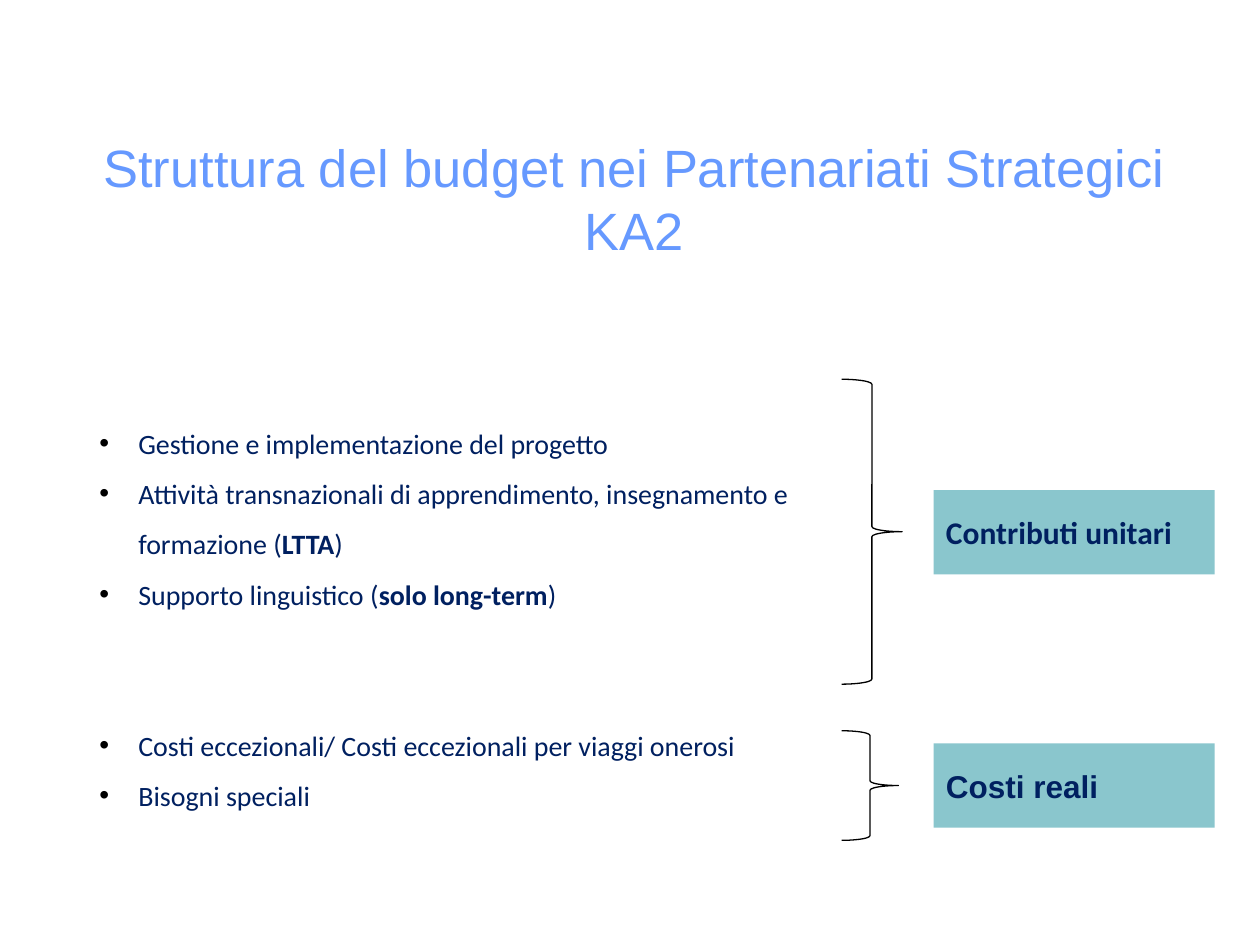
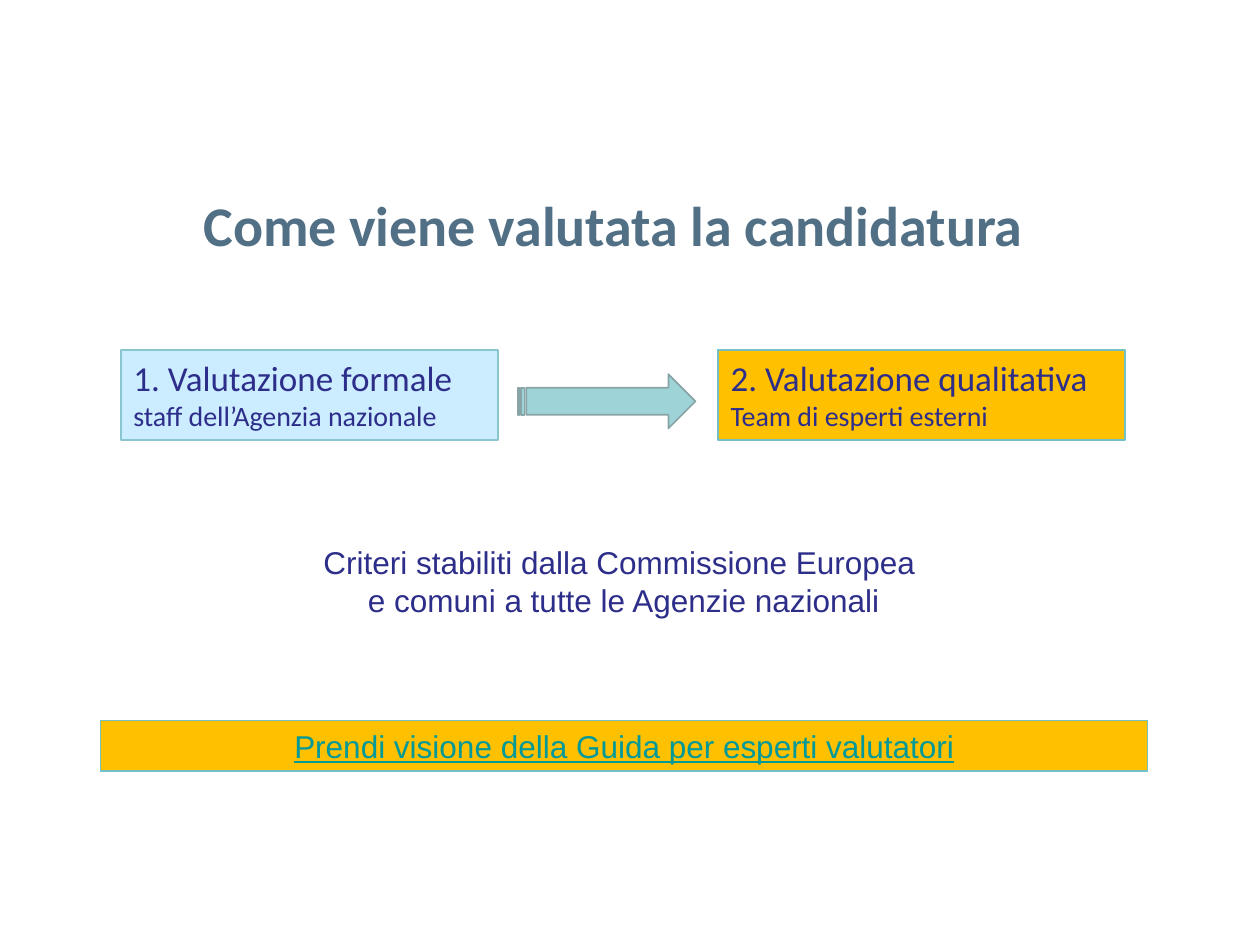
from lxml import etree
from pptx import Presentation
from pptx.dml.color import RGBColor
from pptx.enum.shapes import MSO_SHAPE
from pptx.enum.text import MSO_ANCHOR, MSO_AUTO_SIZE, PP_ALIGN
from pptx.oxml.ns import qn
from pptx.util import Inches, Pt

RECT = MSO_SHAPE.RECTANGLE
BRACE = MSO_SHAPE.RIGHT_BRACE
ARROW = MSO_SHAPE.STRIPED_RIGHT_ARROW
TOP, MIDDLE = MSO_ANCHOR.TOP, MSO_ANCHOR.MIDDLE
LEFT, CENTER = PP_ALIGN.LEFT, PP_ALIGN.CENTER
NO_FIT = MSO_AUTO_SIZE.NONE

COLORS = {
    "black": "000000", "navy": "002060", "indigo": "2D2D8A",
    "sky": "6699FF", "slate": "516F85", "teal": "8AC6CD",
    "aqua": "72BFC5", "mint": "9ED3D7", "gray": "89A4A7",
    "pale": "CCECFF", "gold": "FFC000", "link": "009999",
}


def color(name):
    return RGBColor.from_string(COLORS[name])


class Deck:
    """Holds the shared style and the current slide."""

    def __init__(self):
        self.prs = Presentation()
        self.prs.slide_width = Inches(10)
        self.prs.slide_height = Inches(7.5)
        self.slide = None

    def page(self, text, box, tone, **form):
        self.slide = self.prs.slides.add_slide(self.prs.slide_layouts[5])
        title = self.slide.shapes.title
        for name, value in zip(("left", "top", "width", "height"), box):
            setattr(title, name, Inches(value))
        self.label(title, [text], tone, anchor=MIDDLE, align=CENTER, **form)

    def label(self, shape, lines, tone, anchor=TOP, align=LEFT, sizes=None, **form):
        frame = shape.text_frame
        setup = {"word_wrap": True, "auto_size": NO_FIT, "vertical_anchor": anchor,
                 "margin_left": Inches(0.1), "margin_right": Inches(0.1),
                 "margin_top": Inches(0.05), "margin_bottom": Inches(0.05)}
        for name, value in setup.items():
            setattr(frame, name, value)
        for i, line in enumerate(lines):
            para = frame.add_paragraph() if i else frame.paragraphs[0]
            para.alignment = align
            if sizes:
                form["size"] = Pt(sizes[i])
            for j, part in enumerate(line.split("*")):
                run = para.add_run()
                run.text = part
                look = {**form, "bold": True} if j % 2 else form
                for name, value in look.items():
                    setattr(run.font, name, value)
                run.font.color.rgb = color(tone)
        return frame

    def shape(self, kind, box, fill=None, line=None, width=1):
        item = self.slide.shapes.add_shape(kind, *map(Inches, box))
        item.shadow.inherit = False
        if fill:
            item.fill.solid()
            item.fill.fore_color.rgb = color(fill)
        else:
            item.fill.background()
        if line:
            item.line.color.rgb = color(line)
            item.line.width = Pt(width)
        else:
            item.line.fill.background()
        return item

    def text(self, lines, box, tone, **form):
        item = self.slide.shapes.add_textbox(*map(Inches, box))
        return self.label(item, lines, tone, **form)

    def bullets(self, lines, box, tone, **form):
        frame = self.text(lines, box, tone, **form)
        for para in frame.paragraphs:
            props = para._p.get_or_add_pPr()
            props.set("marL", str(Inches(0.31)))
            props.set("indent", str(-Inches(0.31)))
            tint = etree.SubElement(props, qn("a:buClr"))
            etree.SubElement(tint, qn("a:srgbClr"), val=COLORS["black"])
            etree.SubElement(props, qn("a:buFont"), typeface="Arial")
            etree.SubElement(props, qn("a:buChar"), char="•")
            para.line_spacing = 1.5
        return frame


def budget(deck):
    deck.page("Struttura del budget nei Partenariati Strategici KA2",
              (0.59, 1.09, 8.89, 0.96), "sky", size=Pt(30), name="Arial")
    costs = deck.bullets(
        ["Gestione e implementazione del progetto",
         "Attività transnazionali di apprendimento, insegnamento e formazione (*LTTA*)",
         "Supporto linguistico (*solo long-term*)",
         "Costi eccezionali/ Costi eccezionali per viaggi onerosi",
         "Bisogni speciali"],
        (0.69, 3.2, 5.87, 3.33), "navy", size=Pt(16), name="Calibri")
    costs.paragraphs[3].space_before = Pt(57.5)
    groups = [("Contributi unitari", "Calibri", 3.89, (6.68, 3.01, 0.48, 2.42)),
              ("Costi reali", "Arial", 5.9, (6.68, 5.8, 0.45, 0.87))]
    for name, face, top, span in groups:
        deck.shape(BRACE, span, line="black", width=0.75)
        tag = deck.shape(RECT, (7.41, top, 2.23, 0.67), "teal")
        deck.label(tag, [name], "navy", anchor=MIDDLE,
                   size=Pt(18), name=face, bold=True)


def review(deck):
    deck.page("Come viene valutata la candidatura", (0.37, 1.15, 9, 1.25),
              "slate", size=Pt(32), name="Calibri", bold=True)
    steps = [("1. Valutazione formale", "staff dell’Agenzia nazionale",
              0.96, 2.99, "pale", "teal"),
             ("2. Valutazione qualitativa", "Team di esperti esterni",
              5.7, 3.23, "gold", "aqua")]
    for head, team, left, wide, fill, edge in steps:
        step = deck.shape(RECT, (left, 2.78, wide, 0.71), fill, edge)
        deck.label(step, [head, team], "indigo", sizes=(20, 16), name="Calibri")
    deck.shape(ARROW, (4.11, 2.97, 1.41, 0.43), "mint", "gray")
    deck.text(["Criteri stabiliti dalla Commissione Europea ",
               "e comuni a tutte le Agenzie nazionali"],
              (1.08, 4.26, 7.74, 1.26), "indigo", align=CENTER,
              size=Pt(18), name="Arial")
    guide = deck.shape(RECT, (0.8, 5.72, 8.31, 0.4), "gold", "aqua", 0.75)
    deck.label(guide, ["Prendi visione della Guida per esperti valutatori"], "link",
               align=CENTER, size=Pt(18), name="Arial", underline=True)


def main():
    deck = Deck()
    budget(deck)
    review(deck)
    deck.prs.save("out.pptx")


if __name__ == "__main__":
    main()
